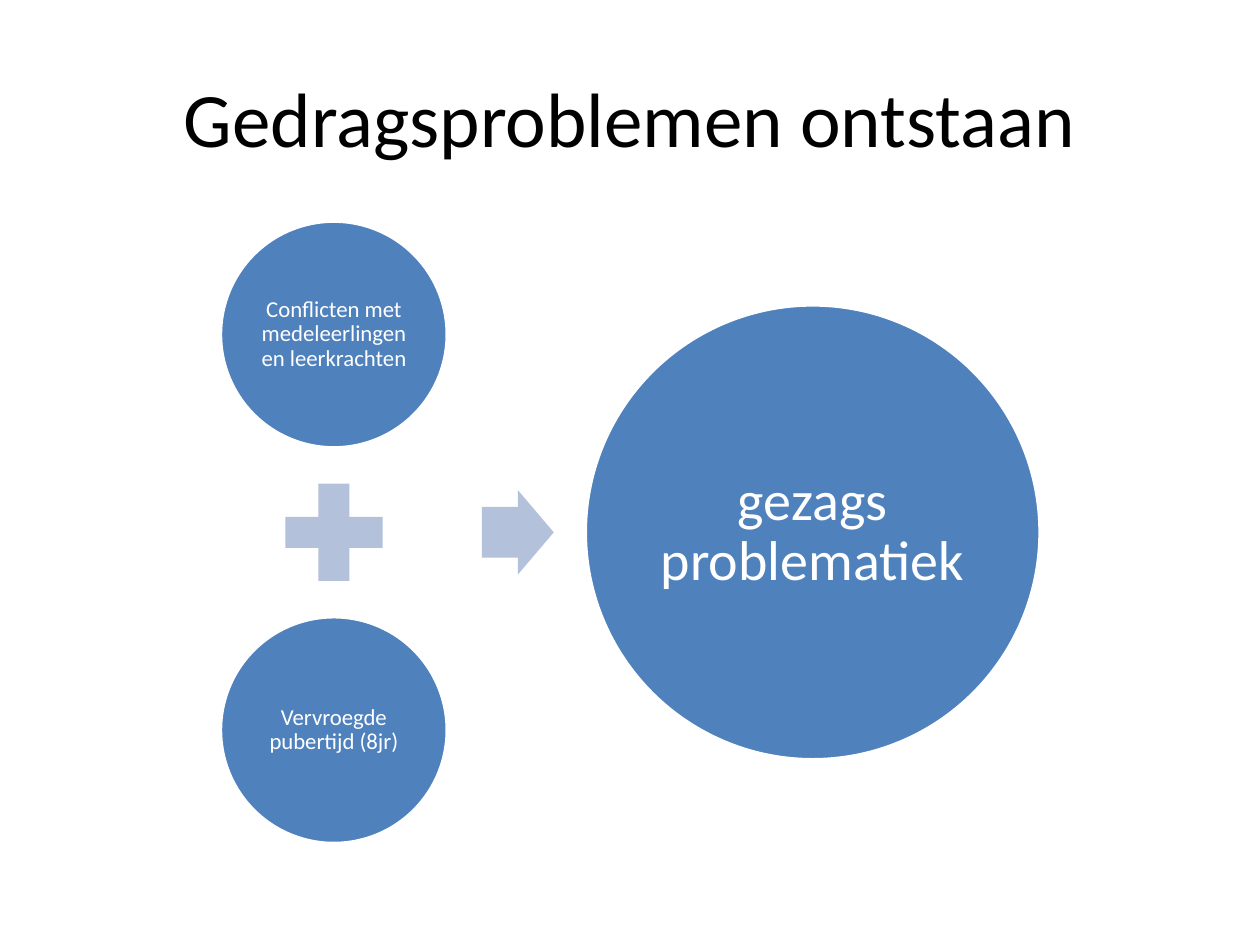
from pptx import Presentation
from pptx.dml.color import RGBColor
from pptx.enum import shapes, text
from pptx.util import Inches, Pt

HUES = {"ink": "000000", "blue": "4F81BD", "pale": "B3C1DB", "white": "FFFFFF"}
KINDS = shapes.MSO_SHAPE
MID = 4.225  # shared centre line of plus, arrow and result
LEFT = 2.65  # centre of the left column
STEP = 1.57  # from the plus to each cause


def hue(name):
    return RGBColor.from_string(HUES[name])


def write(shape, words, size, tint, inset, lines=1.0):
    frame = shape.text_frame
    pad = Inches(inset)
    look = {
        "word_wrap": True,
        "vertical_anchor": text.MSO_ANCHOR.MIDDLE,
        "margin_left": pad,
        "margin_right": pad,
        "margin_top": pad,
        "margin_bottom": pad,
    }
    for key, value in look.items():
        setattr(frame, key, value)
    para = frame.paragraphs[0]
    para.alignment = text.PP_ALIGN.CENTER
    para.line_spacing = lines
    run = para.add_run()
    run.text = words
    for key, value in {"name": "Calibri", "size": Pt(size)}.items():
        setattr(run.font, key, value)
    run.font.color.rgb = hue(tint)


def add_title(slide, words):
    box = slide.shapes.add_textbox(Inches(0.5), Inches(0.3), Inches(9), Inches(1.25))
    write(box, words, 44, "ink", 0.05)


def add_form(slide, kind, mid, size, fill):
    """Add a preset shape around its centre point."""
    (x, y), (wide, high) = mid, size
    form = slide.shapes.add_shape(
        kind, Inches(x - wide / 2), Inches(y - high / 2), Inches(wide), Inches(high)
    )
    form.shadow.inherit = False
    form.fill.solid()
    form.fill.fore_color.rgb = hue(fill)
    form.line.fill.background()
    return form


def add_disc(slide, mid, width, words, size, inset):
    disc = add_form(slide, KINDS.OVAL, mid, (width, width), "blue")
    disc.line.color.rgb = hue("white")
    disc.line.width = Pt(2)
    write(disc, words, size, "white", inset, 0.9)


def add_sign(slide, kind, mid, size, bends):
    sign = add_form(slide, kind, mid, size, "pale")
    for i, bend in enumerate(bends):
        sign.adjustments[i] = bend


def main():
    deck = Presentation()
    deck.slide_width, deck.slide_height = Inches(10), Inches(7.5)
    slide = deck.slides.add_slide(deck.slide_layouts[6])

    add_title(slide, "Gedragsproblemen ontstaan")
    causes = ["Conflicten met medeleerlingen en leerkrachten", "Vervroegde pubertijd (8jr)"]
    for side, words in zip((-1, 1), causes):
        add_disc(slide, (LEFT, MID + side * STEP), 1.8, words, 13, 0.02)
    add_sign(slide, KINDS.MATH_PLUS, (LEFT, MID), (1.05, 1.05), [0.235])
    add_sign(slide, KINDS.RIGHT_ARROW, (4.11, MID), (0.57, 0.67), [0.6, 0.5])
    add_disc(slide, (6.45, MID), 3.61, "gezags problematiek", 32, 0.04)

    deck.save("out.pptx")


if __name__ == "__main__":
    main()
